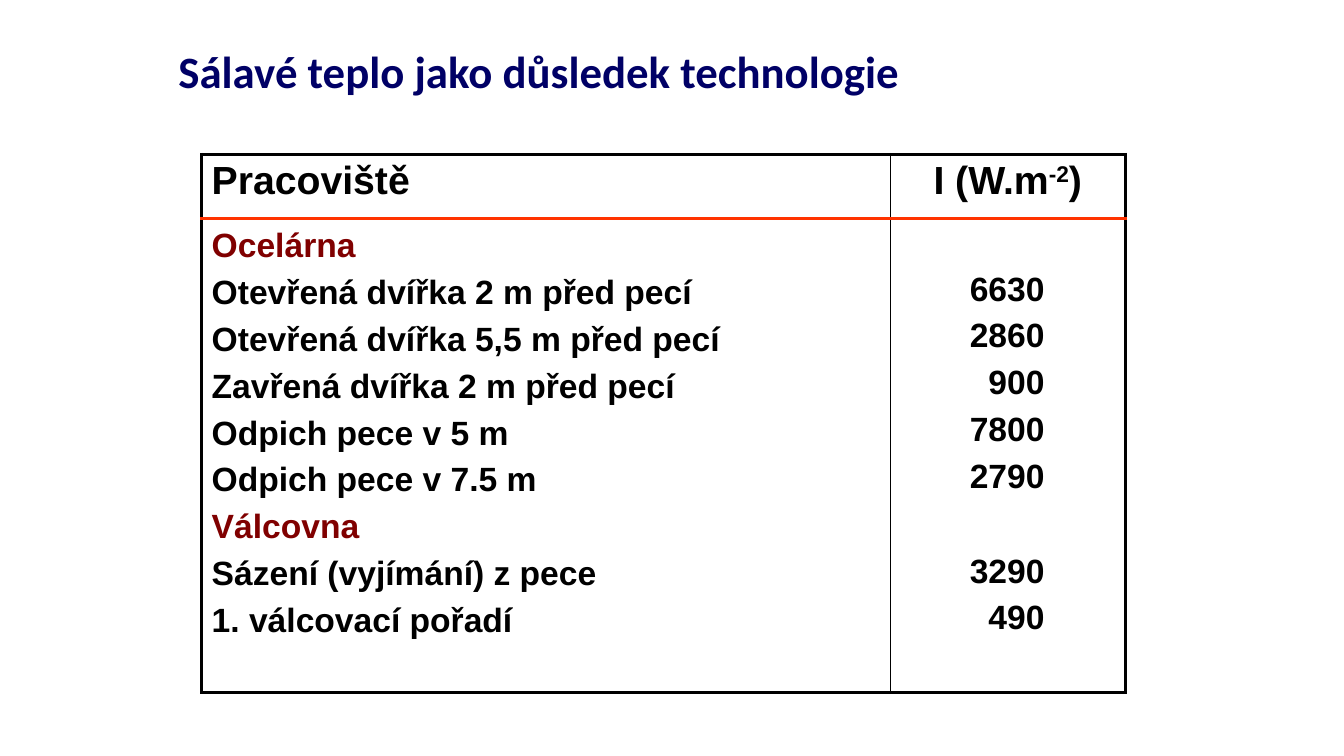
from lxml.etree import SubElement
from pptx import Presentation
from pptx.dml.color import RGBColor
from pptx.enum.text import MSO_ANCHOR, PP_ALIGN
from pptx.oxml.ns import qn
from pptx.util import Inches, Pt

NAVY = RGBColor(0x00, 0x00, 0x66)
BLACK = RGBColor(0x00, 0x00, 0x00)
MAROON = RGBColor(0x80, 0x00, 0x00)
ORANGE = RGBColor(0xFF, 0x33, 0x00)

TITLE = "Sálavé teplo jako důsledek technologie"
HEADS = [[("Pracoviště", 0)], [("I (W.m", 0), ("-2", 30000), (")", 0)]]
GROUPS = [
    ("Ocelárna", [
        ("Otevřená dvířka 2 m před pecí", 6630),
        ("Otevřená dvířka 5,5 m před pecí", 2860),
        ("Zavřená dvířka 2 m před pecí", 900),
        ("Odpich pece v 5 m", 7800),
        ("Odpich pece v 7.5 m", 2790),
    ]),
    ("Válcovna", [
        ("Sázení (vyjímání) z pece", 3290),
        ("1. válcovací pořadí", 490),
    ]),
]
WIDTHS = [6.83, 2.33]
HEIGHTS = [0.64, 4.7]
GAP, SKIP = 4, 38.2

TITLE_FONT = {"name": "Calibri", "size": Pt(32), "bold": True}
HEAD_FONT = {"name": "Arial", "size": Pt(28), "bold": True}
BODY_FONT = {"name": "Arial", "size": Pt(24), "bold": True}


def style(item, form):
    for key, value in form.items():
        setattr(item, key, value)


def write(para, text, form, color, raise_by=0):
    run = para.add_run()
    run.text = text
    style(run.font, form)
    run.font.color.rgb = color
    if raise_by:
        run.font._element.set("baseline", str(raise_by))


def fill_list(cell, lines, align):
    frame = cell.text_frame
    for i, (text, color, before) in enumerate(lines):
        para = frame.add_paragraph() if i else frame.paragraphs[0]
        style(para, {"alignment": align, "line_spacing": 1.1,
                     "space_before": Pt(before if i else 0)})
        write(para, text, BODY_FONT, color)


def border(cell, row, col):
    outer, inner = (BLACK, 2.25), (BLACK, 1)
    rule = (ORANGE, 2.25)
    sides = {
        "L": inner if col else outer,
        "R": outer if col else inner,
        "T": rule if row else outer,
        "B": outer if row else rule,
    }
    props = cell._tc.get_or_add_tcPr()
    for side, (color, width) in sides.items():
        line = SubElement(props, qn("a:ln" + side), w=str(Pt(width)))
        solid = SubElement(line, qn("a:solidFill"))
        SubElement(solid, qn("a:srgbClr"), val=str(color))


def main():
    deck = Presentation()
    style(deck, {"slide_width": Inches(13.33), "slide_height": Inches(7.5)})
    slide = deck.slides.add_slide(deck.slide_layouts[5])

    title = slide.shapes.title
    style(title, {"left": Inches(1.67), "top": Inches(0.3),
                  "width": Inches(10), "height": Inches(0.87)})
    title.text_frame.vertical_anchor = MSO_ANCHOR.MIDDLE
    para = title.text_frame.paragraphs[0]
    style(para, {"alignment": PP_ALIGN.LEFT, "line_spacing": 0.9})
    write(para, TITLE, TITLE_FONT, NAVY)

    table = slide.shapes.add_table(
        2, 2, Inches(2), Inches(1.53),
        Inches(sum(WIDTHS)), Inches(sum(HEIGHTS))).table
    style(table, {"first_row": False, "horz_banding": False})
    for col, width in zip(table.columns, WIDTHS):
        col.width = Inches(width)
    for row, height in zip(table.rows, HEIGHTS):
        row.height = Inches(height)
    for row in range(2):
        for col in range(2):
            cell = table.cell(row, col)
            border(cell, row, col)
            cell.fill.background()

    for col, parts in enumerate(HEADS):
        para = table.cell(0, col).text_frame.paragraphs[0]
        para.alignment = PP_ALIGN.CENTER if col else PP_ALIGN.LEFT
        for text, lift in parts:
            write(para, text, HEAD_FONT, BLACK, lift)

    names, values = [], []
    for group, rows in GROUPS:
        names.append((group, MAROON, GAP))
        for i, (name, value) in enumerate(rows):
            names.append((name, BLACK, GAP))
            values.append((str(value), BLACK, GAP if i else SKIP))
    fill_list(table.cell(1, 0), names, PP_ALIGN.LEFT)
    cell = table.cell(1, 1)
    style(cell, {"margin_top": Inches(0.48), "margin_right": Inches(0.8)})
    fill_list(cell, values, PP_ALIGN.RIGHT)

    deck.save("out.pptx")


if __name__ == "__main__":
    main()
